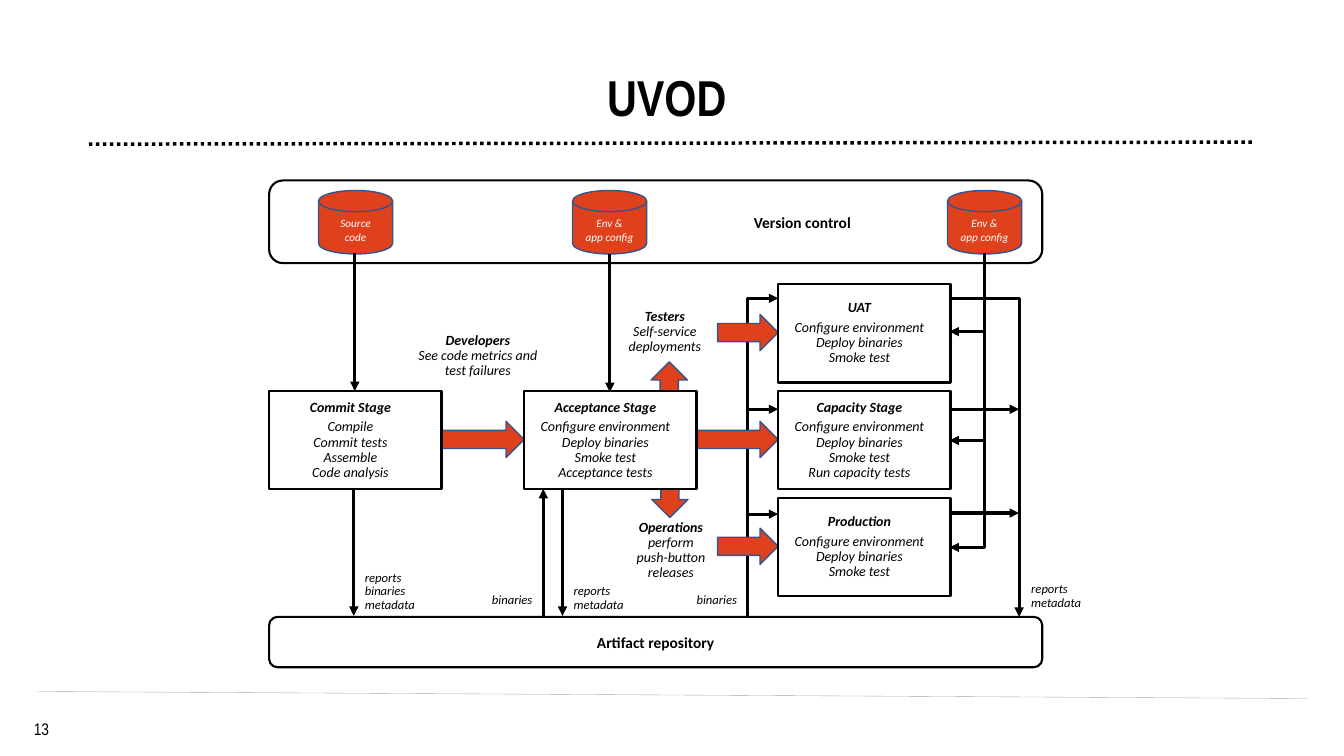
from dataclasses import dataclass

from lxml.etree import SubElement
from pptx import Presentation
from pptx.dml.color import RGBColor
from pptx.enum.dml import MSO_LINE_DASH_STYLE as Dash
from pptx.enum.shapes import MSO_CONNECTOR as Link, MSO_SHAPE as Shape
from pptx.enum.text import MSO_ANCHOR as Anchor, PP_ALIGN as Align
from pptx.oxml.ns import qn
from pptx.util import Inches, Pt


@dataclass(frozen=True)
class Theme:
    ink: str = "000000"
    paper: str = "FFFFFF"
    accent: str = "DF411C"
    accent_edge: str = "325491"
    rule: str = "A6AAA9"
    heading_font: str = "Arial Narrow"
    body_font: str = "Calibri"
    title: float = 36
    number: float = 12
    band: float = 11
    stage: float = 10
    note: float = 9
    store: float = 8
    flow_width: float = 2.25
    frame_width: float = 1.5
    accent_width: float = 1


class Diagram:
    COLUMNS, ROWS = 133.33, 75

    def __init__(self, deck, theme):
        self.theme = theme
        self.width, self.height = deck.slide_width, deck.slide_height
        self.shapes = deck.slides.add_slide(deck.slide_layouts[6]).shapes

    def col(self, count):
        return round(self.width * count / self.COLUMNS)

    def row(self, count):
        return round(self.height * count / self.ROWS)

    def place(self, left, top, width, height):
        return self.col(left), self.row(top), self.col(width), self.row(height)

    def letter(self, holder, lines, size, color, font=None, bold=0, italic=False,
               align=Align.CENTER, anchor=Anchor.TOP, spacing=0.9, gap=0, left_inset=0):
        frame = holder.text_frame
        frame.word_wrap = True
        frame.vertical_anchor = anchor
        frame.margin_left, frame.margin_right = Inches(left_inset), Inches(0.1)
        frame.margin_top = frame.margin_bottom = Inches(0.05)
        frame.text = "\n".join(lines)
        for index, paragraph in enumerate(frame.paragraphs):
            paragraph.alignment = align
            paragraph.line_spacing = spacing
            if index == 1 and gap:
                paragraph.space_before = Pt(gap)
            for run in paragraph.runs:
                run.font.name = font or self.theme.body_font
                run.font.size = Pt(size)
                run.font.bold = index < bold
                run.font.italic = italic
                run.font.color.rgb = RGBColor.from_string(color)

    def text(self, box, lines, size, **style):
        holder = self.shapes.add_textbox(*self.place(*box))
        self.letter(holder, lines, size, self.theme.ink, **style)

    def block(self, kind, box, fill, edge, width):
        block = self.shapes.add_shape(kind, *self.place(*box))
        block.shadow.inherit = False
        block.fill.solid()
        block.fill.fore_color.rgb = RGBColor.from_string(fill)
        block.line.color.rgb = RGBColor.from_string(edge)
        block.line.width = Pt(width)
        return block

    def frame(self, kind, box):
        return self.block(kind, box, self.theme.paper, self.theme.ink, self.theme.frame_width)

    def accent(self, kind, box):
        return self.block(kind, box, self.theme.accent, self.theme.accent_edge,
                          self.theme.accent_width)

    def band(self, top, height):
        return self.frame(Shape.ROUNDED_RECTANGLE, (26.7, top, 76.7, height))

    def stage(self, left, top, lines):
        stage = self.frame(Shape.RECTANGLE, (left, top, 17.1, 9.75))
        self.letter(stage, lines, self.theme.stage, self.theme.ink, bold=1, italic=True,
                    anchor=Anchor.MIDDLE, gap=3.3)

    def store(self, left, lines):
        store = self.accent(Shape.FLOWCHART_MAGNETIC_DISK, (left, 18.9, 7.35, 6.3))
        self.letter(store, lines, self.theme.store, self.theme.paper, italic=True,
                    spacing=1, left_inset=0.1)

    def push(self, left, top, length, turn=0):
        arrow = self.accent(Shape.RIGHT_ARROW, (left, top, length, 3.6))
        arrow.rotation = turn

    def line(self, start, end, color, width, kind=Link.STRAIGHT):
        line = self.shapes.add_connector(kind, self.col(start[0]), self.row(start[1]),
                                         self.col(end[0]), self.row(end[1]))
        line.line.color.rgb = RGBColor.from_string(color)
        line.line.width = Pt(width)
        SubElement(line._element.spPr, qn("a:effectLst"))
        return line

    def flow(self, start, end, kind=Link.STRAIGHT):
        flow = self.line(start, end, self.theme.ink, self.theme.flow_width, kind)
        SubElement(flow._element.spPr.find(qn("a:ln")), qn("a:tailEnd"), type="triangle")
        return flow

    def elbow(self, start, end, upright_first=False):
        if upright_first:
            middle_x, middle_y = (start[0] + end[0]) / 2, (start[1] + end[1]) / 2
            start, end = [(middle_x + y - middle_y, middle_y - x + middle_x)
                          for x, y in (start, end)]
        elbow = self.flow(start, end, Link.ELBOW)
        properties = elbow._element.spPr
        properties.find(qn("a:prstGeom")).set("prst", "bentConnector2")
        if upright_first:
            properties.find(qn("a:xfrm")).set("rot", str(90 * 60000))


def main():
    deck = Presentation()
    deck.slide_width, deck.slide_height = Inches(13.333), Inches(7.5)
    theme = Theme()
    page = Diagram(deck, theme)

    page.text((2.2, 70.8, 4.8, 2.9), ["13"], theme.number, font=theme.heading_font, spacing=1)
    page.line((3.7, 68.6), (129.8, 69.3), theme.rule, 0.25)
    divider = page.line((124.2, 14.1), (8.8, 14.3), theme.ink, 2.5)
    divider.line.dash_style = Dash.ROUND_DOT
    page.text((0, 1.7, 133.3, 11.2), ["UVOD"], theme.title, font=theme.heading_font,
              bold=1, anchor=Anchor.BOTTOM, spacing=0.7)

    page.band(17.9, 8.2)
    supply, delivery, config, reports = 74.2, 77.2, 97.7, 101.1
    page.elbow((supply, 61.1), (delivery, 29.6), upright_first=True)
    for left, top, length, turn in ((42.8, 41.8, 9.2, 0), (68.2, 41.8, 9, 0),
                                    (71.2, 31.2, 6, 0), (71.2, 52.4, 6, 0),
                                    (64.4, 47.5, 4.1, 90), (64.4, 36.1, 4, 270)):
        page.push(left, top, length, turn)

    for box, lines in (
            ((61.8, 51.1, 10.5, 8.2), ["Operations", "perform", "push-button", "releases"]),
            ((61.2, 30.2, 10.5, 5.7), ["Testers", "Self-service", "deployments"]),
            ((41.4, 32.6, 13, 5.4), ["Developers", "See code metrics and test failures"])):
        page.text(box, lines, theme.stage, bold=1, italic=True)

    deploy = ["Configure environment", "Deploy binaries", "Smoke test"]
    page.stage(26.7, 38.8, ["Commit Stage", "Compile", "Commit tests", "Assemble",
                            "Code analysis"])
    page.stage(52, 38.8, ["Acceptance Stage", *deploy, "Acceptance tests"])

    for left, lines in ((94, ["Env &", "app config"]), (31.6, ["Source", "code"]),
                        (56.8, ["Env &", "app config"])):
        page.store(left, lines)

    for x, top, bottom in ((35.2, 25.1, 38.8), (35.1, 48.5, 61.1), (55.8, 48.5, 61.1),
                           (53.9, 61.1, 48.5), (60.5, 25.2, 38.9)):
        page.flow((x, top), (x, bottom))
    for y in (40.6, 51):
        page.flow((supply, y), (delivery, y))
    page.elbow((94.2, 29.6), (reports, 61.2))
    page.elbow((config, 25.1), (94.2, 54.3), upright_first=True)
    for y in (50.9, 40.6):
        page.flow((94.2, y), (reports, y))
    for y in (43.7, 32.9):
        page.flow((config, y), (94.2, y))

    for index, (name, extra) in enumerate((("UAT", []),
                                           ("Capacity Stage", ["Run capacity tests"]),
                                           ("Production", []))):
        page.stage(77.2, 28.2 + 10.6 * index, [name, *deploy, *extra])

    for left, top, height, lines, align in (
            (56.9, 57.8, 3.1, ["reports", "metadata"], Align.LEFT),
            (67.7, 58, 3.1, ["binaries"], Align.CENTER),
            (36.2, 56.2, 5, ["reports", "binaries", "metadata"], Align.LEFT),
            (47.4, 58, 3.1, ["binaries"], Align.CENTER),
            (102.3, 57.6, 3.1, ["reports", "metadata"], Align.LEFT)):
        page.text((left, top, 7.8, height), lines, theme.note, italic=True,
                  align=align, anchor=Anchor.MIDDLE)

    page.text((73.6, 20.9, 13, 2.2), ["Version control"], theme.band, bold=1)
    repository = page.band(61.2, 5)
    page.letter(repository, ["Artifact repository"], theme.band, theme.ink, bold=1,
                anchor=Anchor.MIDDLE, spacing=1, left_inset=0.1)

    deck.save("out.pptx")


if __name__ == "__main__":
    main()
